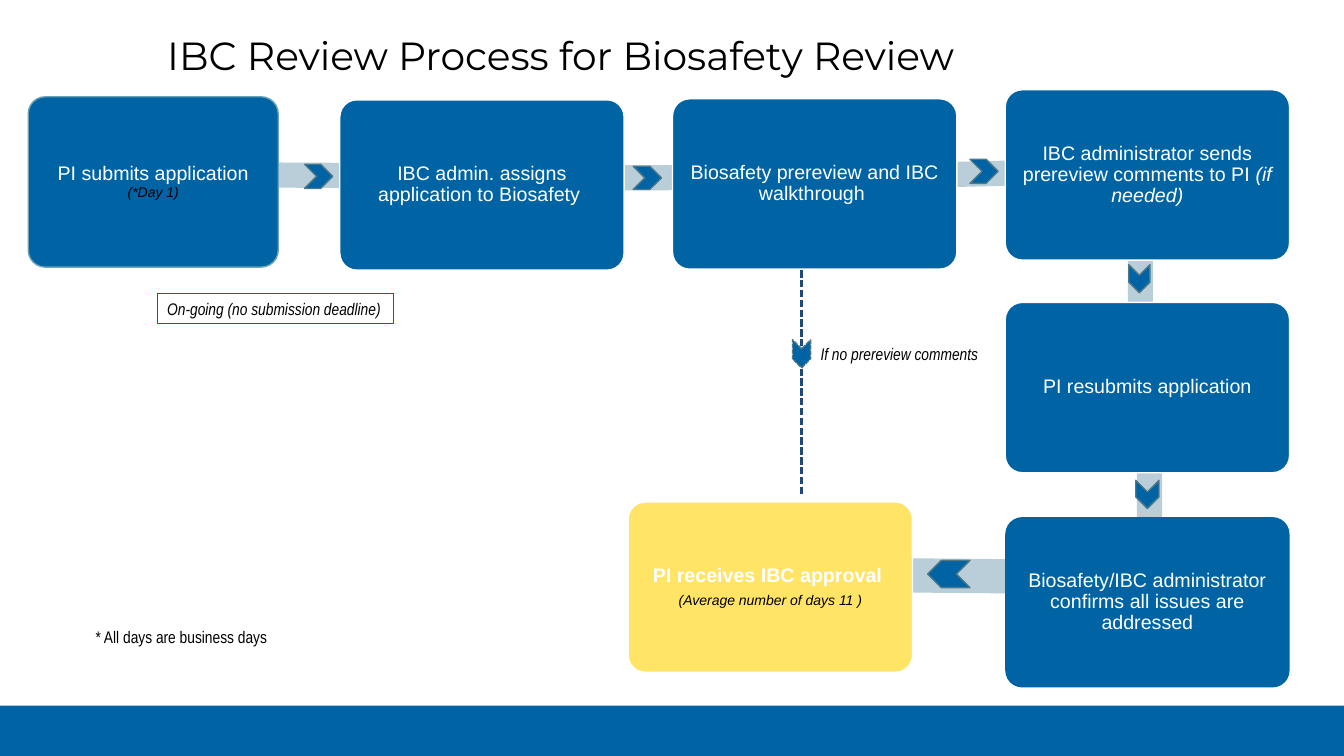
from lxml import etree
from pptx import Presentation
from pptx.dml.color import RGBColor
from pptx.enum.dml import MSO_LINE
from pptx.enum.shapes import MSO_CONNECTOR, MSO_SHAPE
from pptx.enum.text import MSO_ANCHOR, PP_ALIGN
from pptx.oxml.ns import qn
from pptx.util import Inches, Pt

BLUE, PALE, YELLOW = "0064A4", "B9CED8", "FFE466"
WHITE, BLACK, EDGE = "FFFFFF", "000000", "4E7888"
BOX_W, BOX_H = 2.82, 1.69


def rgb(code):
    """Turn a hex string into a colour."""
    return RGBColor.from_string(code)


def add_run(p, text, size, color, font="Arial", bold=False, italic=False):
    """Append one formatted run to a paragraph."""
    r = p.add_run()
    r.text = text
    r.font.name, r.font.size = font, Pt(size)
    r.font.bold, r.font.italic = bold, italic
    r.font.color.rgb = rgb(color)


def add_block(s, kind, box, fill, line=None, rotation=0):
    """Draw a flat filled shape in box, with an optional outline."""
    sp = s.shapes.add_shape(kind, *map(Inches, box))
    sp.shadow.inherit = False
    sp.rotation = rotation
    sp.fill.solid()
    sp.fill.fore_color.rgb = rgb(fill)
    if line:
        sp.line.color.rgb = rgb(line)
        sp.line.width = Pt(1)
    else:
        sp.line.fill.background()
    return sp


def add_step(s, box, paragraphs, fill=BLUE, line=WHITE):
    """Draw one rounded process step with centred text."""
    sp = add_block(s, MSO_SHAPE.ROUNDED_RECTANGLE, box, fill, line)
    sp.adjustments[0] = 0.1
    tf = sp.text_frame
    tf.word_wrap = True
    tf.vertical_anchor = MSO_ANCHOR.MIDDLE
    tf.margin_left = tf.margin_right = Inches(0.06)
    tf.margin_top = tf.margin_bottom = Inches(0.06)
    for i, runs in enumerate(paragraphs):
        p = tf.add_paragraph() if i else tf.paragraphs[0]
        p.alignment = PP_ALIGN.CENTER
        p.line_spacing = 0.9
        p.space_after = Pt(5)
        for text, size, color, style in runs:
            add_run(p, text, size, color, **style)


def add_label(s, box, text, size=12, font="Arial Narrow", italic=False):
    """Place a one-line text box."""
    sp = s.shapes.add_textbox(*map(Inches, box))
    sp.text_frame.word_wrap = True
    add_run(sp.text_frame.paragraphs[0], text, size, BLACK, font, italic=italic)
    return sp


def add_rails(s):
    """Draw the pale bars that link the steps."""
    rails = [
        ((0.69, 1.61, 3.26, 0.25), 0.3),
        ((3.94, 1.64, 3.3, 0.25), 359.9),
        ((7.26, 1.62, 3.3, 0.25), 358.6),
        ((10.26, 2.22, 2.1, 0.25), 90),
        ((10.34, 4.35, 2.12, 0.25), 90),
        ((8.37, 5.54, 1.77, 0.34), 180.5),
    ]
    for box, rotation in rails:
        add_block(s, MSO_SHAPE.RECTANGLE, box, PALE, rotation=rotation)


def add_steps(s):
    """Draw the process steps in order."""
    note = {"italic": True}
    add_step(s, (0.28, 0.96, 2.48, BOX_H),
             [[("PI submits application ", 14, WHITE, {}), ("(*Day 1)", 10, BLACK, note)]],
             line="6AA2B8")
    steps = [
        (3.37, 0.99, [("IBC admin. assigns application to Biosafety ", 14, WHITE, {})]),
        (6.67, 0.98, [("Biosafety prereview and IBC walkthrough ", 14, WHITE, {})]),
        (9.97, 0.89, [("IBC administrator sends prereview comments to PI ", 14, WHITE, {}),
                      ("(if needed)", 14, WHITE, note)]),
        (9.97, 3, [("PI resubmits application", 14, WHITE, {})]),
    ]
    for x, y, runs in steps:
        add_step(s, (x, y, BOX_W, BOX_H), [runs])
    add_step(s, (9.97, 5.13, BOX_W, BOX_H),
             [[("Biosafety/IBC administrator confirms all issues are addressed", 14, WHITE, {})]],
             line=None)
    add_step(s, (6.23, 4.98, BOX_W, BOX_H),
             [[("PI receives IBC approval ", 14, WHITE, {"bold": True})],
              [("(Average number of days 11 )", 10, BLACK, note)]],
             fill=YELLOW)


def add_chevrons(s):
    """Draw the direction marks on the rails."""
    marks = [
        ((6.28, 1.65, 0.28, 0.23), 0),
        ((3.02, 1.63, 0.28, 0.24), 0),
        ((9.62, 1.58, 0.28, 0.24), 0),
        ((11.24, 4.79, 0.28, 0.23), 90),
        ((11.16, 2.66, 0.28, 0.21), 90),
        ((9.2, 5.56, 0.42, 0.27), 180),
    ]
    for box, rotation in marks:
        add_block(s, MSO_SHAPE.CHEVRON, box, BLUE, EDGE, rotation)


def add_shortcut(s, x, top, bottom):
    """Draw the dashed route from prereview to approval."""
    cx = s.shapes.add_connector(MSO_CONNECTOR.STRAIGHT, Inches(x), Inches(top),
                                Inches(x), Inches(bottom))
    cx.line.color.rgb = rgb("1F497D")
    cx.line.width = Pt(1.75)
    cx.line.dash_style = MSO_LINE.SQUARE_DOT
    etree.SubElement(cx._element.spPr, qn("a:effectLst"))
    add_label(s, (x + 0.09, top + 0.68, 1.8, 0.3), "If no prereview comments", italic=True)
    mark = add_block(s, MSO_SHAPE.CHEVRON, (x - 0.14, top + 0.74, 0.28, 0.18), BLUE, EDGE, 90)
    mark.line.dash_style = MSO_LINE.SQUARE_DOT


def add_notes(s):
    """Place the title, the deadline label and the footnote."""
    add_label(s, (1.56, 0.26, 9.31, 0.57), "IBC Review Process for Biosafety Review",
              28, "Montserrat")
    deadline = add_label(s, (1.56, 2.91, 2.34, 0.3), "On-going (no submission deadline)",
                         italic=True)
    deadline.line.color.rgb = rgb("FF0000")
    deadline.line.width = Pt(0.75)
    add_label(s, (0.85, 6.17, 2, 0.3), "* All days are business days")


def main():
    """Build the slide and save it."""
    prs = Presentation()
    prs.slide_width, prs.slide_height = Inches(13.33), Inches(7.5)
    s = prs.slides.add_slide(prs.slide_layouts[6])
    add_block(s, MSO_SHAPE.RECTANGLE, (0, 7, 13.33, 0.5), BLUE)
    add_rails(s)
    add_steps(s)
    add_notes(s)
    add_shortcut(s, 7.95, 2.68, 4.91)
    add_chevrons(s)
    prs.save("out.pptx")


if __name__ == "__main__":
    main()
